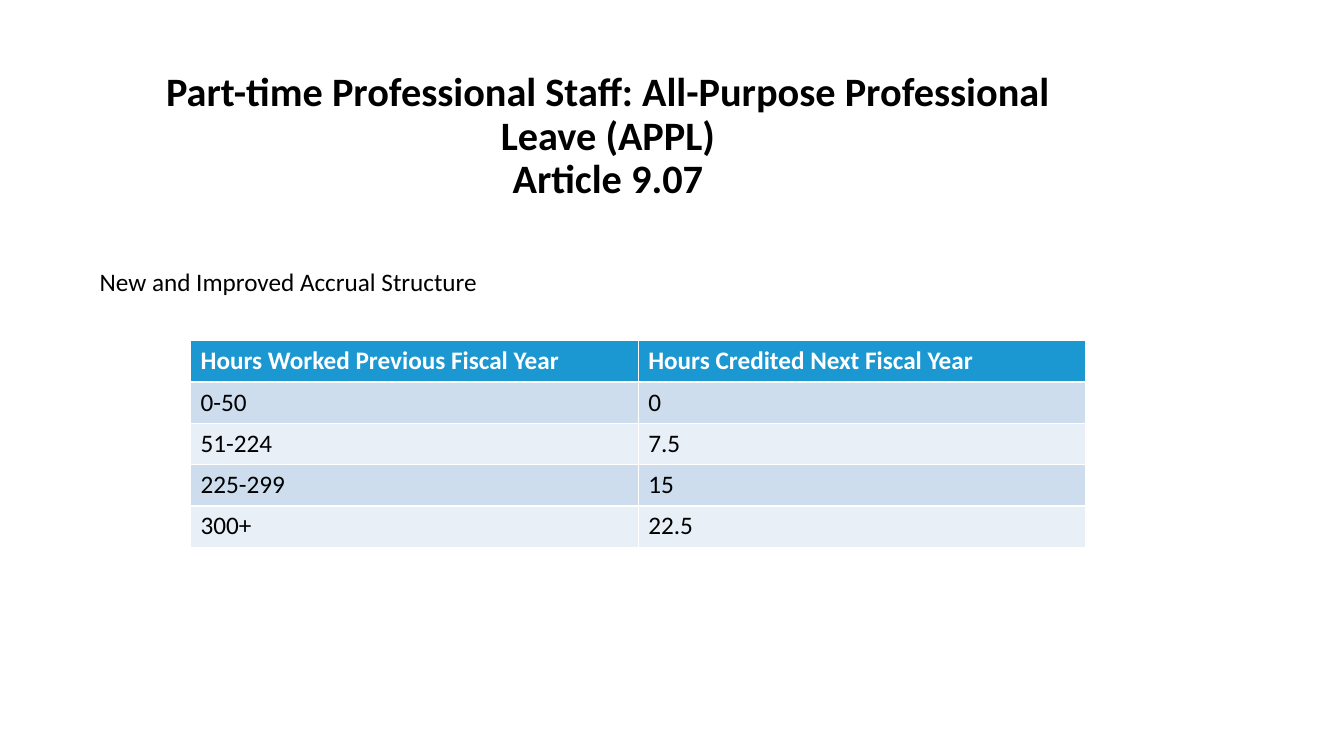
from pptx import Presentation
from pptx.dml.color import RGBColor
from pptx.enum.text import MSO_ANCHOR, PP_ALIGN
from pptx.util import Inches, Pt

CENTER, LEFT = PP_ALIGN.CENTER, PP_ALIGN.LEFT
TOP, BOTTOM = MSO_ANCHOR.TOP, MSO_ANCHOR.BOTTOM

BLACK = RGBColor(0x00, 0x00, 0x00)
WHITE = RGBColor(0xFF, 0xFF, 0xFF)
HEADER_BLUE = RGBColor(0x1B, 0x98, 0xD1)
BAND_DARK = RGBColor(0xCD, 0xDD, 0xEE)
BAND_LIGHT = RGBColor(0xE8, 0xEF, 0xF7)

ACCRUAL_ROWS = [
    ("Hours Worked Previous Fiscal Year", "Hours Credited Next Fiscal Year"),
    ("0-50", "0"),
    ("51-224", "7.5"),
    ("225-299", "15"),
    ("300+", "22.5"),
]


class SlideBuilder:
    font_name = "Calibri"

    def __init__(self, slide):
        self.slide = slide

    def format_runs(self, p, size, color, bold):
        for r in p.runs:
            r.font.name = self.font_name
            r.font.size = Pt(size)
            r.font.bold = bold
            r.font.color.rgb = color

    def text(self, text, x, y, w, h, size, bold=False, align=LEFT,
             anchor=TOP, line_spacing=1.0, space_before=0):
        sp = self.slide.shapes.add_textbox(Inches(x), Inches(y), Inches(w), Inches(h))
        tf = sp.text_frame
        tf.word_wrap = True
        tf.vertical_anchor = anchor
        p = tf.paragraphs[0]
        p.text = text
        p.alignment = align
        p.line_spacing = line_spacing
        p.space_before = Pt(space_before)
        self.format_runs(p, size, BLACK, bold)

    def table(self, rows, x, y, col_w, row_h, size):
        n_rows, n_cols = len(rows), len(rows[0])
        table = self.slide.shapes.add_table(
            n_rows, n_cols, Inches(x), Inches(y),
            Inches(col_w * n_cols), Inches(row_h * n_rows)).table
        for col in table.columns:
            col.width = Inches(col_w)
        for i, values in enumerate(rows):
            table.rows[i].height = Inches(row_h)
            header = i == 0
            fill = HEADER_BLUE if header else (BAND_LIGHT, BAND_DARK)[i % 2]
            for j, value in enumerate(values):
                cell = table.cell(i, j)
                cell.fill.solid()
                cell.fill.fore_color.rgb = fill
                cell.text_frame.text = value
                self.format_runs(cell.text_frame.paragraphs[0], size,
                                 WHITE if header else BLACK, header)


def main():
    prs = Presentation()
    prs.slide_width, prs.slide_height = Inches(13.33), Inches(7.5)
    s = SlideBuilder(prs.slides.add_slide(prs.slide_layouts[6]))
    s.text("Part-time Professional Staff: All-Purpose Professional Leave (APPL)\vArticle 9.07",
           1.17, 1.02, 9.72, 1.04, 28.8, bold=True, align=CENTER,
           anchor=BOTTOM, line_spacing=0.9)
    s.text("New and Improved Accrual Structure", 0.89, 2.53, 9.72, 4.02, 18,
           line_spacing=1.2, space_before=10)
    s.table(ACCRUAL_ROWS, 1.89, 3.38, 4.44, 0.41, 18)
    prs.save("out.pptx")


if __name__ == "__main__":
    main()
